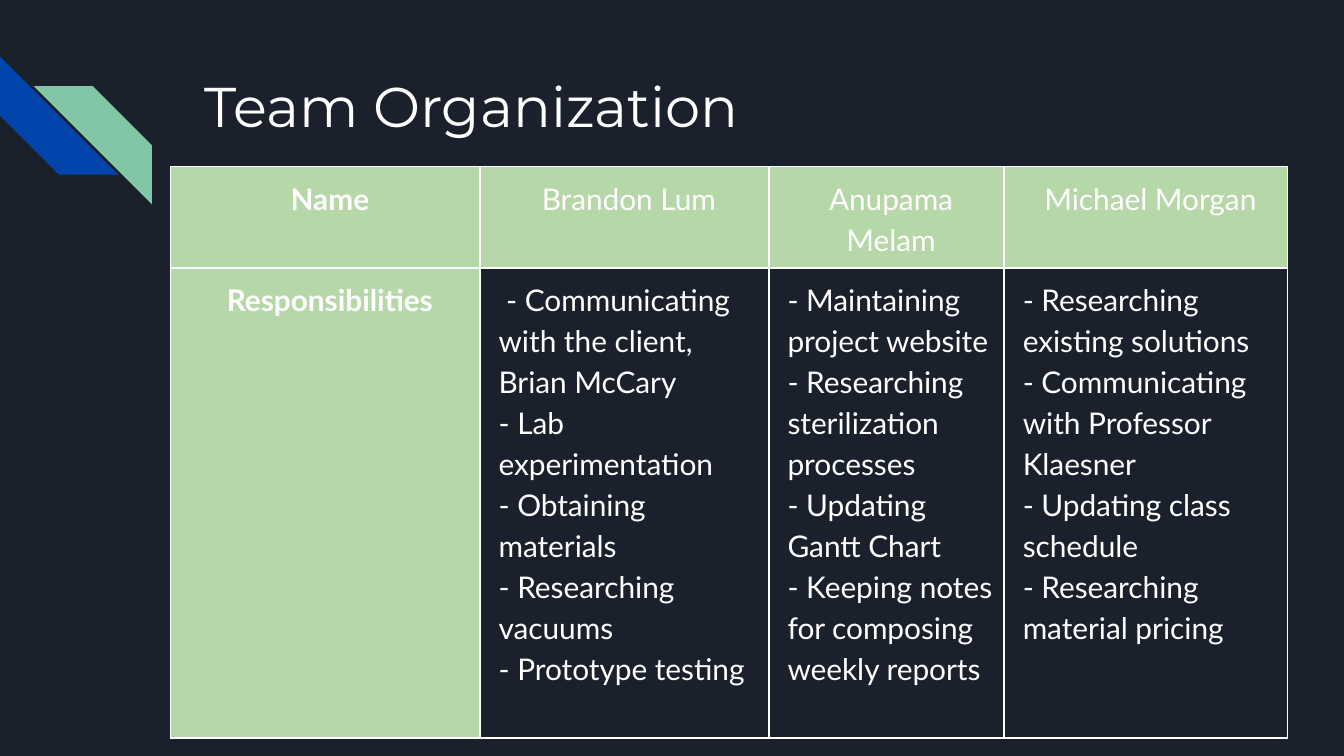
from lxml import etree
from pptx import Presentation
from pptx.dml.color import RGBColor
from pptx.enum import shapes, text
from pptx.oxml.ns import qn
from pptx.util import Inches, Pt

COLORS = {
    "background": "1B212C",
    "blue": "0145AC",
    "mint": "82C7A5",
    "label": "B6D7A8",
    "white": "FFFFFF",
}
COLUMN_WIDTHS = [2.3, 2.15, 1.75, 2.11]
ROW_HEIGHTS = [0.75, 3.5]
TEAM = {
    "Brandon Lum": [
        " - Communicating with the client, Brian McCary",
        "- Lab experimentation",
        "- Obtaining materials",
        "- Researching vacuums",
        "- Prototype testing",
    ],
    "Anupama Melam": [
        "- Maintaining project website",
        "- Researching sterilization processes",
        "- Updating Gantt Chart",
        "- Keeping notes for composing weekly reports",
    ],
    "Michael Morgan": [
        "- Researching existing solutions",
        "- Communicating with Professor Klaesner",
        "- Updating class schedule",
        "- Researching material pricing",
    ],
}


def color(name):
    return RGBColor.from_string(COLORS[name])


def add_span(para, words, font, size, bold=False):
    span = para.add_run()
    span.text = words
    span.font.name = font
    span.font.size = Pt(size)
    span.font.bold = bold
    span.font.color.rgb = color("white")


def add_stripe(page, left, top, fill, rotation=0, flipped=False):
    stripe = page.shapes.add_shape(
        shapes.MSO_SHAPE.DIAGONAL_STRIPE,
        Inches(left), Inches(top), Inches(0.88), Inches(0.88))
    stripe.adjustments[0] = 0.5
    stripe.rotation = rotation
    if flipped:
        stripe._element.spPr.find(qn("a:xfrm")).set("flipH", "1")
    stripe.shadow.inherit = False
    stripe.fill.solid()
    stripe.fill.fore_color.rgb = color(fill)
    stripe.line.fill.background()


def add_title(page, words):
    box = page.shapes.add_textbox(
        Inches(1.42), Inches(0.43), Inches(7.7), Inches(1))
    frame = box.text_frame
    frame.word_wrap = True
    frame.vertical_anchor = text.MSO_ANCHOR.TOP
    frame.margin_left = frame.margin_right = Inches(0.1)
    frame.margin_top = frame.margin_bottom = Inches(0.1)
    add_span(frame.paragraphs[0], words, "Montserrat", 30)


def add_borders(cell):
    """Put a white line on all four sides; lines must precede the fill."""
    properties = cell._tc.get_or_add_tcPr()
    for index, side in enumerate(("lnL", "lnR", "lnT", "lnB")):
        line = etree.Element(qn(f"a:{side}"), w=str(Pt(1)))
        fill = etree.SubElement(line, qn("a:solidFill"))
        etree.SubElement(fill, qn("a:srgbClr"), val=COLORS["white"])
        properties.insert(index, line)


def fill_cell(cell, lines, label=False, bold=False):
    """Write one paragraph per line; labels are centred on green."""
    cell.margin_left = cell.margin_right = Inches(0.07)
    cell.margin_top = cell.margin_bottom = Inches(0.07)
    if label:
        cell.fill.solid()
        cell.fill.fore_color.rgb = color("label")
    else:
        cell.fill.background()
    add_borders(cell)
    frame = cell.text_frame
    for index, words in enumerate(lines):
        para = frame.add_paragraph() if index else frame.paragraphs[0]
        para.alignment = text.PP_ALIGN.CENTER if label else text.PP_ALIGN.LEFT
        para.line_spacing = 1.15
        para._p.get_or_add_pPr().set("marL", str(Inches(0.07)))
        add_span(para, words, "Lato", 16, bold)


def add_team_table(page):
    table = page.shapes.add_table(
        len(ROW_HEIGHTS), len(COLUMN_WIDTHS), Inches(1.27), Inches(1.24),
        Inches(sum(COLUMN_WIDTHS)), Inches(sum(ROW_HEIGHTS))).table
    table.horz_banding = False
    table.first_row = False
    for column, width in zip(table.columns, COLUMN_WIDTHS):
        column.width = Inches(width)
    for row, height in zip(table.rows, ROW_HEIGHTS):
        row.height = Inches(height)
    for index, heading in enumerate(("Name", "Responsibilities")):
        fill_cell(table.cell(index, 0), [heading], label=True, bold=True)
    for index, (member, duties) in enumerate(TEAM.items(), start=1):
        fill_cell(table.cell(0, index), [member], label=True)
        fill_cell(table.cell(1, index), duties)


def main():
    deck = Presentation()
    deck.slide_width = Inches(10)
    deck.slide_height = deck.slide_width * 9 // 16
    page = deck.slides.add_slide(deck.slide_layouts[6])
    page.background.fill.solid()
    page.background.fill.fore_color.rgb = color("background")
    add_stripe(page, 0, 0.42, "blue", rotation=270)
    add_stripe(page, 0.25, 0.64, "mint", flipped=True)
    add_title(page, "Team Organization")
    add_team_table(page)
    deck.save("out.pptx")


if __name__ == "__main__":
    main()
